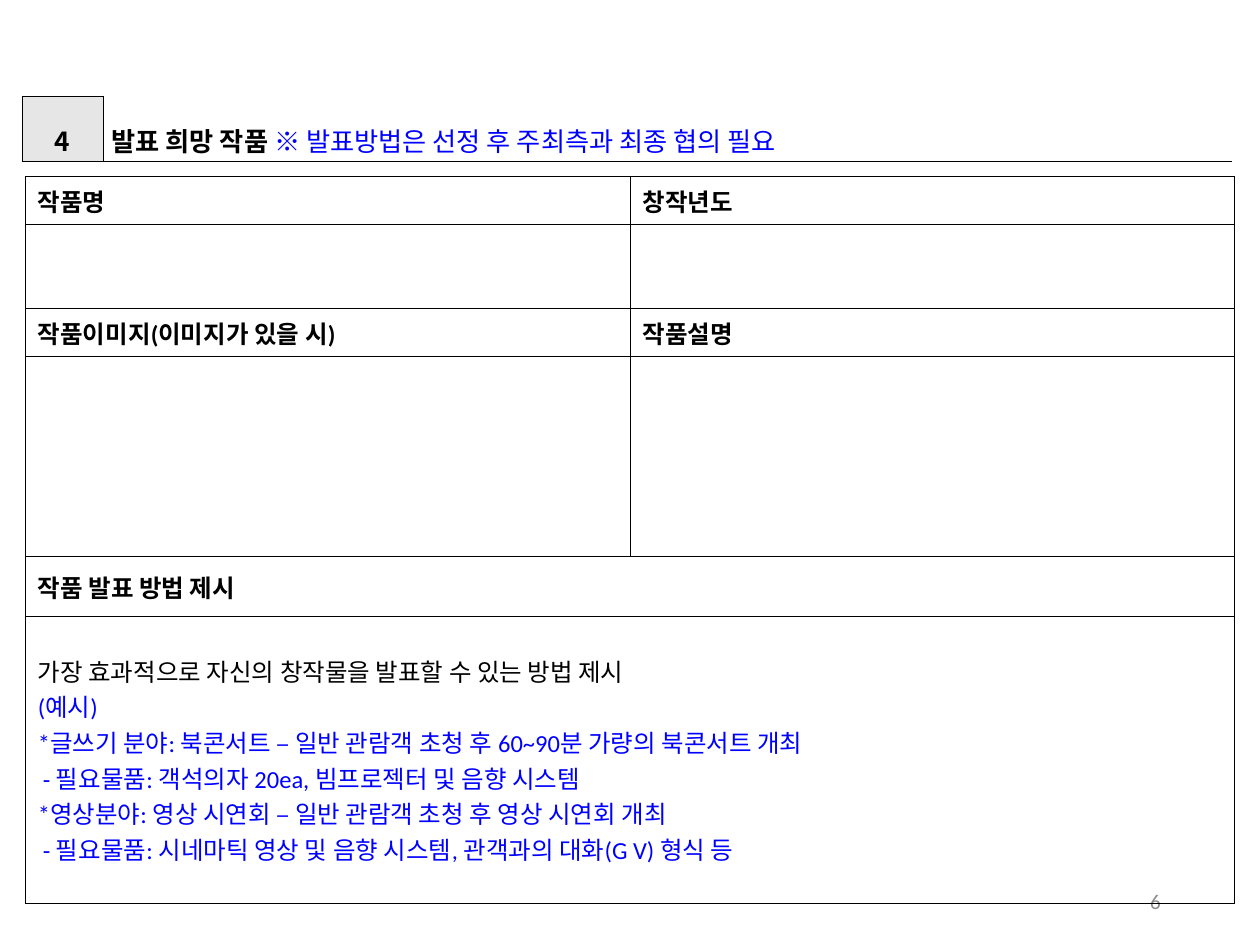
import pptx
import pptx.util
import pptx.oxml
import pptx.oxml.ns
from pptx.dml.color import RGBColor
from pptx.enum.text import MSO_ANCHOR, PP_ALIGN

BLACK = RGBColor(0x00, 0x00, 0x00)
BLUE = RGBColor(0x00, 0x00, 0xFF)
GRAY = RGBColor(0x8C, 0x8C, 0x8C)
PALE = RGBColor(0xE7, 0xE6, 0xE6)
LATIN = "Calibri"
KOREAN = "Noto Sans CJK KR"

HEAD = {"size": pptx.util.Pt(15), "bold": True, "name": KOREAN}
NOTE = {"size": pptx.util.Pt(15), "bold": False, "name": LATIN}
LABEL = {"size": pptx.util.Pt(14), "bold": True, "name": LATIN}
BODY = {"size": pptx.util.Pt(14), "bold": False, "name": LATIN}
PAGE = {"size": pptx.util.Pt(12), "bold": False, "name": LATIN}

EXAMPLES = [
    ("(예시)", 0),
    ("*글쓰기 분야: 북콘서트 – 일반 관람객 초청 후 60~90분 가량의 북콘서트 개최", 0),
    ("- 필요물품: 객석의자 20ea, 빔프로젝터 및 음향 시스템", 0.4),
    ("*영상분야: 영상 시연회 – 일반 관람객 초청 후 영상 시연회 개최", 0),
    ("- 필요물품: 시네마틱 영상 및 음향 시스템, 관객과의 대화(G V) 형식 등", 0.4),
]


def unit(n):
    """Length of n grid steps; the slide is 100 columns by 75 rows."""
    return pptx.util.Inches(n / 10)


class Sheet:
    """Holds the style and the current slide."""

    def __init__(self, deck):
        self.slide = deck.slides.add_slide(deck.slide_layouts[6])

    def run(self, para, text, style, color=BLACK):
        run = para.add_run()
        run.text = text
        for key, value in style.items():
            setattr(run.font, key, value)
        run.font.color.rgb = color
        face = pptx.oxml.parse_xml(
            f'<a:ea {pptx.oxml.ns.nsdecls("a")} typeface="{KOREAN}"/>')
        run.font._element.find(pptx.oxml.ns.qn("a:latin")).addnext(face)

    def text(self, col, row, wide, high, text, style, color):
        box = self.slide.shapes.add_textbox(*map(unit, (col, row, wide, high)))
        frame = box.text_frame
        frame.word_wrap = True
        frame.vertical_anchor = MSO_ANCHOR.MIDDLE
        para = frame.paragraphs[0]
        para.alignment = PP_ALIGN.RIGHT
        self.run(para, text, style, color)

    def table(self, col, row, cols, rows):
        """Add an unfilled table without banding."""
        frame = self.slide.shapes.add_table(
            len(rows), len(cols),
            *map(unit, (col, row, sum(cols), sum(rows))))
        table = frame.table
        table.first_row = table.horz_banding = False
        for part, size in zip(table.columns, cols):
            part.width = unit(size)
        for part, size in zip(table.rows, rows):
            part.height = unit(size)
        for cell in table.iter_cells():
            cell.fill.background()
        return table

    def edge(self, cell, width, sides="LRTB"):
        """Draw the named sides of a cell and hide the others."""
        props = cell._tc.get_or_add_tcPr()
        for spot, side in enumerate("LRTB"):
            paint = (f'<a:solidFill><a:srgbClr val="{BLACK}"/></a:solidFill>'
                     if side in sides else "<a:noFill/>")
            props.insert(spot, pptx.oxml.parse_xml(
                f'<a:ln{side} {pptx.oxml.ns.nsdecls("a")} '
                f'w="{pptx.util.Pt(width)}">{paint}</a:ln{side}>'))

    def header(self):
        table = self.table(1.75, 7.6, (6.4, 89.6), (5.2,))
        mark, title = table.iter_cells()
        for cell, align in ((mark, PP_ALIGN.CENTER), (title, PP_ALIGN.JUSTIFY)):
            cell.margin_left = cell.margin_right = unit(0.7)
            cell.margin_top = cell.margin_bottom = unit(0.2)
            cell.vertical_anchor = MSO_ANCHOR.MIDDLE
            para = cell.text_frame.paragraphs[0]
            para.alignment = align
            para.line_spacing = 1.6
        mark.fill.solid()
        mark.fill.fore_color.rgb = PALE
        self.edge(mark, 0.25)
        self.edge(title, 0.25, "LB")
        self.run(mark.text_frame.paragraphs[0], "4", HEAD)
        para = title.text_frame.paragraphs[0]
        self.run(para, "발표 희망 작품 ", HEAD)
        self.run(para, "※ 발표방법은 선정 후 주최측과 최종 협의 필요", NOTE, BLUE)

    def form(self):
        table = self.table(2, 14, (48, 48), (3.8, 6.7, 3.8, 15.9, 4.7, 22.8))
        for cell in table.iter_cells():
            self.edge(cell, 0.5)
        for row in (4, 5):
            table.cell(row, 0).merge(table.cell(row, 1))
            table.cell(row, 0).vertical_anchor = MSO_ANCHOR.MIDDLE
        labels = {
            (0, 0): "작품명", (0, 1): "창작년도",
            (2, 0): "작품이미지(이미지가 있을 시)", (2, 1): "작품설명",
            (4, 0): "작품 발표 방법 제시",
        }
        for place, label in labels.items():
            para = table.cell(*place).text_frame.paragraphs[0]
            self.run(para, label, LABEL)
        frame = table.cell(5, 0).text_frame
        self.run(frame.paragraphs[0],
                 "가장 효과적으로 자신의 창작물을 발표할 수 있는 방법 제시", BODY)
        for line, indent in EXAMPLES:
            para = frame.add_paragraph()
            para._p.get_or_add_pPr().set("marL", str(unit(indent)))
            self.run(para, line, BODY, BLUE)


def main():
    deck = pptx.Presentation()
    deck.slide_width, deck.slide_height = unit(100), unit(75)
    sheet = Sheet(deck)
    sheet.text(70.6, 69.5, 22.5, 4, "6", PAGE, GRAY)
    sheet.header()
    sheet.form()
    deck.save("out.pptx")


if __name__ == "__main__":
    main()
